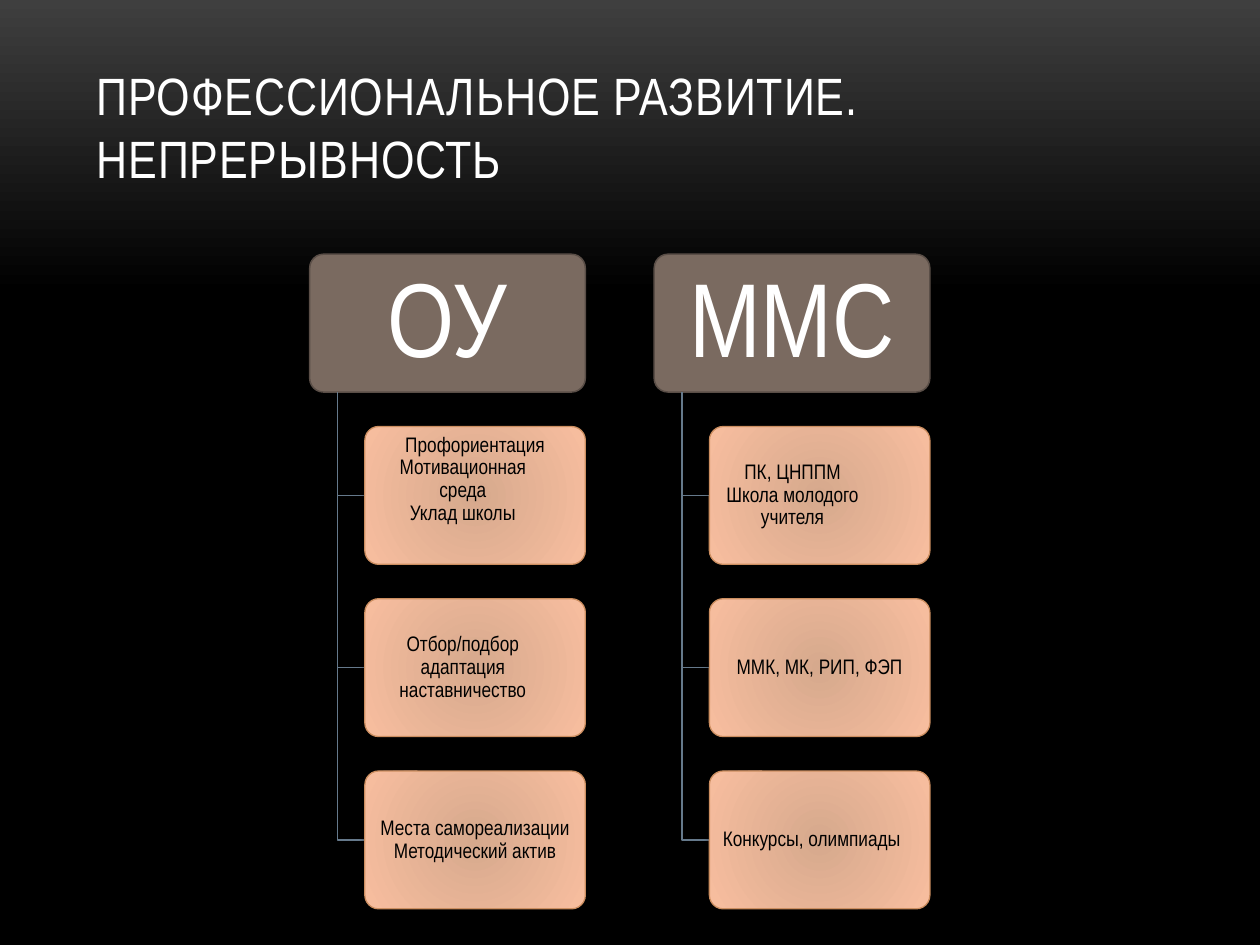
from dataclasses import dataclass

import lxml.etree
import pptx
import pptx.dml.color
import pptx.enum.shapes
import pptx.enum.text
import pptx.oxml.ns
import pptx.util

Pt = pptx.util.Pt
qn = pptx.oxml.ns.qn
Anchor = pptx.enum.text.MSO_ANCHOR
Align = pptx.enum.text.PP_ALIGN

FONT = "Arial Narrow"
COLOURS = {
    "white": "FFFFFF", "black": "000000", "sky": "3F3F3F",
    "header": "7A6A60", "header_line": "5A4E47",
    "card_centre": "D6A98D", "card_edge": "F8BE9F", "card_line": "CC8E60",
    "branch": "65798B",
}

# Layout, in points
LEFT, TOP = 177, 145.3
HEAD_W, BOX_H = 157.5, 78.75
COLUMN_STEP, ROW_STEP = 1.25 * HEAD_W, 1.25 * BOX_H
STEM_X, CARD_X, CARD_W = 0.1 * HEAD_W, 0.2 * HEAD_W, 0.8 * HEAD_W


@dataclass
class Line:
    text: str
    right_indent: float = 0


@dataclass
class Card:
    lines: list[Line]
    at_top: bool = False


@dataclass
class Branch:
    heading: str
    cards: list[Card]


BRANCHES = [
    Branch("ОУ", [
        Card([Line("Профориентация"), Line("Мотивационная среда", 14),
              Line("Уклад школы")], at_top=True),
        Card([Line("Отбор/подбор", 14), Line("адаптация"), Line("наставничество")]),
        Card([Line("Места самореализации"), Line("Методический актив")]),
    ]),
    Branch("ММС", [
        Card([Line("ПК, ЦНППМ", 31), Line("Школа молодого учителя")]),
        Card([Line("ММК, МК, РИП, ФЭП")]),
        Card([Line("Конкурсы, олимпиады", 9)]),
    ]),
]


def colour(name: str) -> pptx.dml.color.RGBColor:
    return pptx.dml.color.RGBColor.from_string(COLOURS[name])


def add_span(para, text: str, size: float, ink: str):
    span = para.add_run()
    span.text = text
    span.font.name = FONT
    span.font.size = Pt(size)
    span.font.color.rgb = colour(ink)
    return span


def set_gradient(fill, stops: list[tuple[float, str]]) -> None:
    fill.gradient()
    for stop, (position, name) in zip(fill.gradient_stops, stops):
        stop.position = position
        stop.color.rgb = colour(name)


def add_box(group, x: float, y: float, width: float, outline: str, weight: float):
    box = group.shapes.add_shape(pptx.enum.shapes.MSO_SHAPE.ROUNDED_RECTANGLE,
                                 Pt(x), Pt(y), Pt(width), Pt(BOX_H))
    box.adjustments[0] = 0.1
    box.shadow.inherit = False
    box.line.color.rgb = colour(outline)
    box.line.width = Pt(weight)
    return box


def write_lines(box, lines: list[Line], size: float, ink: str,
                side: float, upright: float) -> None:
    frame = box.text_frame
    frame.word_wrap = True
    frame.vertical_anchor = Anchor.MIDDLE
    frame.margin_left = frame.margin_right = Pt(side)
    frame.margin_top = frame.margin_bottom = Pt(upright)
    for index, line in enumerate(lines):
        para = frame.add_paragraph() if index else frame.paragraphs[0]
        para.alignment = Align.CENTER
        para.line_spacing = 0.9
        if line.right_indent:
            para._p.get_or_add_pPr().set("marR", str(Pt(line.right_indent)))
        add_span(para, line.text, size, ink)


def add_header(group, x: float, heading: str) -> None:
    box = add_box(group, x, TOP, HEAD_W, "header_line", 0.85)
    box.fill.solid()
    box.fill.fore_color.rgb = colour("header")
    write_lines(box, [Line(heading)], 60, "white", 11, 8)


def add_card(group, x: float, y: float, card: Card) -> None:
    box = add_box(group, x, y, CARD_W, "card_line", 0.75)
    set_gradient(box.fill, [(0, "card_centre"), (1, "card_edge")])
    properties = box.element.spPr

    # Radial gradient
    gradient = properties.find(qn("a:gradFill"))
    gradient.remove(gradient.find(qn("a:lin")))
    radial = lxml.etree.SubElement(gradient, qn("a:path"), {"path": "circle"})
    lxml.etree.SubElement(radial, qn("a:fillToRect"),
                          {side: "100000" for side in "ltrb"})

    # Soft shadow below
    shadow = lxml.etree.SubElement(
        properties.find(qn("a:effectLst")), qn("a:outerShdw"),
        {"blurRad": str(Pt(3)), "dist": str(Pt(2)), "dir": "5400000",
         "rotWithShape": "0"})
    tint = lxml.etree.SubElement(shadow, qn("a:srgbClr"), {"val": COLOURS["black"]})
    lxml.etree.SubElement(tint, qn("a:alpha"), {"val": "40000"})

    write_lines(box, card.lines, 12, "black", 4, 2 if card.at_top else 3.8)
    if card.at_top:
        box.text_frame.vertical_anchor = Anchor.TOP


def add_elbow(group, x: float, y: float, end_x: float, end_y: float) -> None:
    builder = group.shapes.build_freeform(Pt(x), Pt(y))
    builder.add_line_segments([(Pt(x), Pt(end_y)), (Pt(end_x), Pt(end_y))],
                              close=False)
    elbow = builder.convert_to_shape()
    elbow.shadow.inherit = False
    elbow.fill.background()
    elbow.line.color.rgb = colour("branch")
    elbow.line.width = Pt(0.85)


def add_branch(group, x: float, branch: Branch) -> None:
    add_header(group, x, branch.heading)
    for row, card in enumerate(branch.cards, start=1):
        y = TOP + row * ROW_STEP
        add_elbow(group, x + STEM_X, TOP + BOX_H, x + CARD_X, y + BOX_H / 2)
        add_card(group, x + CARD_X, y, card)


def add_title(page, text: str) -> None:
    title = page.shapes.title
    title.left, title.top, title.width, title.height = map(Pt, (48, 21.6, 624, 90))
    frame = title.text_frame
    frame.word_wrap = True
    frame.auto_size = pptx.enum.text.MSO_AUTO_SIZE.NONE
    frame.vertical_anchor = Anchor.BOTTOM
    para = frame.paragraphs[0]
    para.alignment = Align.LEFT
    span = add_span(para, text, 30, "white")
    span.font._element.set("spc", "50")


def main() -> None:
    deck = pptx.Presentation()
    deck.slide_width, deck.slide_height = Pt(720), Pt(540)
    page = deck.slides.add_slide(deck.slide_layouts[5])

    # Background, darkening downwards
    backdrop = page.background.fill
    set_gradient(backdrop, [(0, "sky"), (0.31, "black")])
    backdrop.gradient_angle = 270

    add_title(page, "ПРОФЕССИОНАЛЬНОЕ РАЗВИТИЕ. НЕПРЕРЫВНОСТЬ")

    # Hierarchy
    group = page.shapes.add_group_shape()
    for column, branch in enumerate(BRANCHES):
        add_branch(group, LEFT + column * COLUMN_STEP, branch)

    deck.save("out.pptx")


if __name__ == "__main__":
    main()
